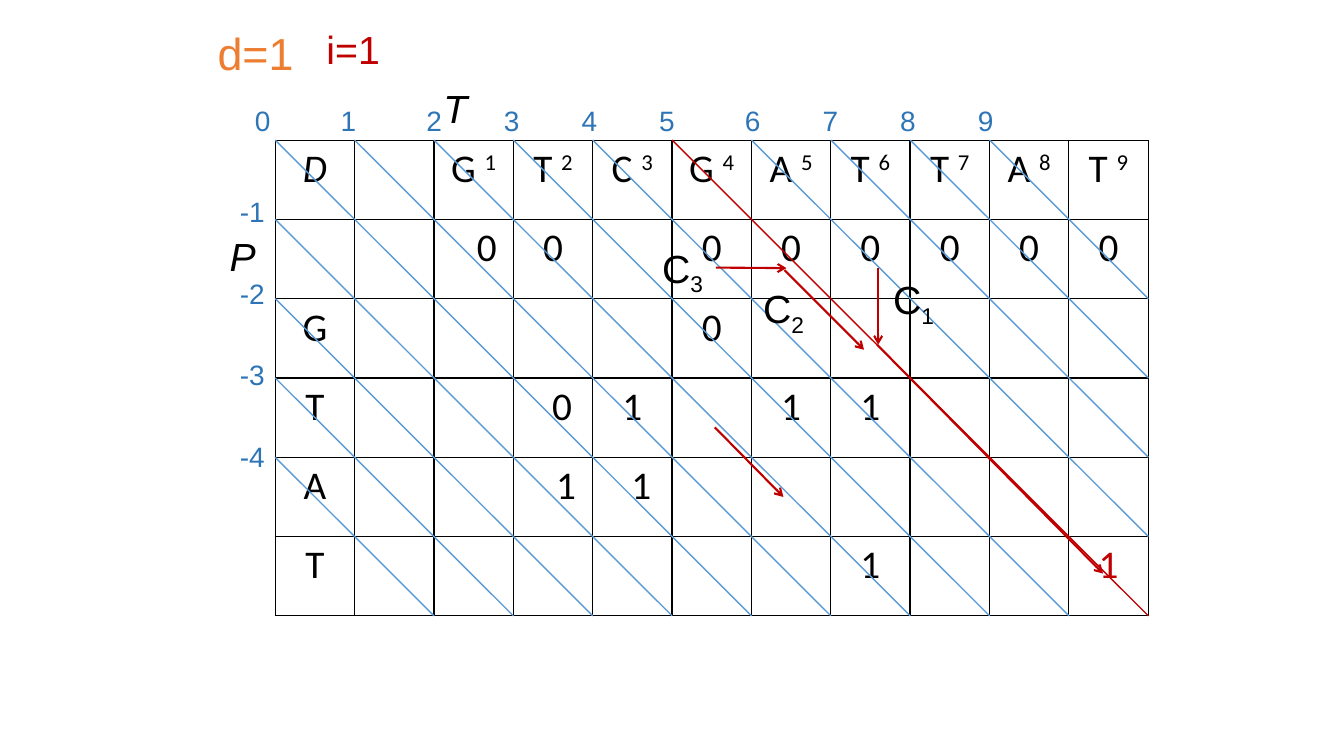
"""Build the diagonal dynamic programming table slide."""
from dataclasses import dataclass
from itertools import accumulate
from typing import Any

from lxml.etree import SubElement
from pptx import Presentation
from pptx.dml.color import RGBColor
from pptx.enum.shapes import MSO_CONNECTOR
from pptx.enum.text import MSO_ANCHOR, MSO_AUTO_SIZE, PP_ALIGN
from pptx.oxml.ns import qn
from pptx.util import Inches, Pt

COLOURS = {"ink": "000000", "diagonal": "5B9BD5", "scale": "2E75B6",
           "deletion": "ED7D31", "path": "C00000"}
LEFT, TOP, WIDTH, HEIGHT = 2.73, 1.39, 8.66, 4.72
ROWS, COLUMNS = 6, 11
STEP_X, STEP_Y = WIDTH / COLUMNS, HEIGHT / ROWS
PATH_COLUMN = 5
SCALE_GAPS = [0.85, 0.85, 0.77, 0.77, 0.77, 0.85, 0.77, 0.77, 0.77]


@dataclass
class Entry:
    """Text of one table cell, pushed right by an indent."""
    row: int
    column: int
    text: str
    raised: str = ""
    indent: float = 0
    colour: str = "ink"
    italic: bool = False


@dataclass
class Label:
    """A free text label with an optional lowered index."""
    text: str
    left: float
    top: float
    width: float
    height: float = 0.57
    size: int = 28
    colour: str = "ink"
    italic: bool = False
    lowered: str = ""


@dataclass
class Line:
    """A straight line, with an arrowhead at its end if asked."""
    start: tuple[float, float]
    end: tuple[float, float]
    colour: str = "diagonal"
    width: float = 1
    arrow: bool = False


ENTRIES = [
    Entry(0, 0, "D", italic=True),
    *[Entry(0, number + 1, f"{letter} ", str(number))
      for number, letter in enumerate("GTCGATTAT", 1)],
    *[Entry(row, 0, letter) for row, letter in enumerate("GTAT", 2)],
    Entry(1, 2, "0", indent=0.26), Entry(1, 3, "0"),
    *[Entry(1, column, "0") for column in range(5, COLUMNS)],
    Entry(2, 5, "0"),
    Entry(3, 3, "0", indent=0.18), Entry(3, 4, "1"), Entry(3, 6, "1"), Entry(3, 7, "1"),
    Entry(4, 3, "1", indent=0.26), Entry(4, 4, "1", indent=0.18),
    Entry(5, 7, "1"), Entry(5, 10, "1", colour="path"),
]
LABELS = [
    Label("T", 4.3, 0.79, 0.44, italic=True),
    Label("P", 2.18, 2.26, 0.46, italic=True),
    *[Label(f"-{row}", 2.28, 1.07 + 0.81 * row, 0.45, 0.44, 20, "scale")
      for row in range(1, 5)],
    Label("d=1", 2.06, 0.21, 0.96, 0.64, 32, "deletion"),
    Label("i=1", 3.14, 0.2, 0.74, colour="path"),
    Label("C", 7.47, 2.77, 0.63, lowered="2"),
    Label("C", 8.76, 2.68, 0.63, lowered="1"),
]
INSERTION = Label("C", 6.47, 2.37, 0.63, lowered="3")
INSERTION_ARROW = Line((7.1, 2.66), (7.8, 2.66), "path", 1.5, True)
ARROWS = [Line(start, end, "path", 1.5, True) for start, end in [
    ((8.71, 2.66), (8.71, 3.42)), ((7.78, 2.68), (8.57, 3.47)),
    ((7.09, 4.24), (7.77, 4.93)), ((8.7, 3.42), (10.94, 5.69))]]


def apply(target: Any, values: dict[str, Any]) -> None:
    """Set every named attribute on the target."""
    for name, value in values.items():
        setattr(target, name, value)


def add_span(para: Any, text: str, face: str, size: int, colour: str,
             italic: bool = False, baseline: int = 0) -> None:
    """Add one formatted run, raised or lowered by a percentage."""
    span = para.add_run()
    span.text = text
    apply(span.font, {"name": face, "size": Pt(size), "italic": italic, "bold": False})
    span.font.color.rgb = RGBColor.from_string(COLOURS[colour])
    if baseline:
        span._r.get_or_add_rPr().set("baseline", str(baseline * 1000))


def add_label(page: Any, label: Label) -> Any:
    """Add a text box for a label and return it."""
    box = page.shapes.add_textbox(Inches(label.left), Inches(label.top),
                                  Inches(label.width), Inches(label.height))
    apply(box.text_frame, {"word_wrap": False, "auto_size": MSO_AUTO_SIZE.SHAPE_TO_FIT_TEXT})
    para = box.text_frame.paragraphs[0]
    add_span(para, label.text, "Arial", label.size, label.colour, label.italic)
    if label.lowered:
        add_span(para, label.lowered, "Arial", label.size, label.colour, baseline=-25)
    return box


def add_line(page: Any, line: Line) -> Any:
    """Add a connector for a line and return it."""
    points = [Inches(value) for value in (*line.start, *line.end)]
    connector = page.shapes.add_connector(MSO_CONNECTOR.STRAIGHT, *points)
    connector.line.color.rgb = RGBColor.from_string(COLOURS[line.colour])
    connector.line.width = Pt(line.width)
    if line.arrow:
        SubElement(connector.line._get_or_add_ln(), qn("a:tailEnd"), type="arrow")
    SubElement(connector._element.spPr, qn("a:effectLst"))
    return connector


def format_cell(cell: Any) -> None:
    """Give a cell black borders and no fill."""
    properties = cell._tc.get_or_add_tcPr()
    for side in "LRTB":
        border = SubElement(properties, qn(f"a:ln{side}"), w=str(Pt(1)))
        fill = SubElement(border, qn("a:solidFill"))
        SubElement(fill, qn("a:srgbClr"), val=COLOURS["ink"])
    cell.fill.background()
    apply(cell, {"margin_left": Inches(0.1), "margin_right": Inches(0.1),
                 "margin_top": Inches(0.05), "margin_bottom": Inches(0.05),
                 "vertical_anchor": MSO_ANCHOR.TOP})


def add_grid(page: Any) -> None:
    """Add the table and its entries."""
    table = page.shapes.add_table(ROWS, COLUMNS, Inches(LEFT), Inches(TOP),
                                  Inches(WIDTH), Inches(HEIGHT)).table
    apply(table, {"first_row": False, "horz_banding": False})
    for cell in table.iter_cells():
        format_cell(cell)
    for entry in ENTRIES:
        cell = table.cell(entry.row, entry.column)
        cell.margin_left = Inches(0.1 + entry.indent)
        para = cell.text_frame.paragraphs[0]
        para.alignment = PP_ALIGN.CENTER
        add_span(para, entry.text, "Calibri", 28, entry.colour, entry.italic)
        if entry.raised:
            add_span(para, entry.raised, "Calibri", 28, entry.colour, baseline=30)


def add_diagonals(page: Any) -> None:
    """Draw the diagonals that start on the left and top edges."""
    starts = [(0, row) for row in range(ROWS - 1)]
    starts += [(column, 0) for column in range(1, COLUMNS - 1)]
    for column, row in starts:
        length = min(COLUMNS - column, ROWS - row)
        start = (LEFT + column * STEP_X, TOP + row * STEP_Y)
        end = (start[0] + length * STEP_X, start[1] + length * STEP_Y)
        add_line(page, Line(start, end, "path" if column == PATH_COLUMN else "diagonal"))


def add_scale(page: Any) -> None:
    """Add the diagonal numbers on tab stops above the table."""
    numbers = "\t".join(str(number) for number in range(len(SCALE_GAPS) + 1))
    box = add_label(page, Label(numbers, 2.43, 0.98, 7.7, 0.44, 20, "scale"))
    apply(box.text_frame, {"word_wrap": True, "auto_size": MSO_AUTO_SIZE.NONE})
    stops = SubElement(box.text_frame.paragraphs[0]._p.get_or_add_pPr(), qn("a:tabLst"))
    for position in accumulate(SCALE_GAPS):
        SubElement(stops, qn("a:tab"), pos=str(Inches(position)), algn="l")


def main() -> None:
    """Build the deck and save it."""
    deck = Presentation()
    apply(deck, {"slide_width": Inches(13.33), "slide_height": Inches(7.5)})
    page = deck.slides.add_slide(deck.slide_layouts[6])
    add_grid(page)
    add_diagonals(page)
    add_scale(page)
    for label in LABELS:
        add_label(page, label)
    insertion = add_label(page, INSERTION)
    add_line(page, INSERTION_ARROW).begin_connect(insertion, 3)
    for arrow in ARROWS:
        add_line(page, arrow)
    deck.save("out.pptx")


if __name__ == "__main__":
    main()
